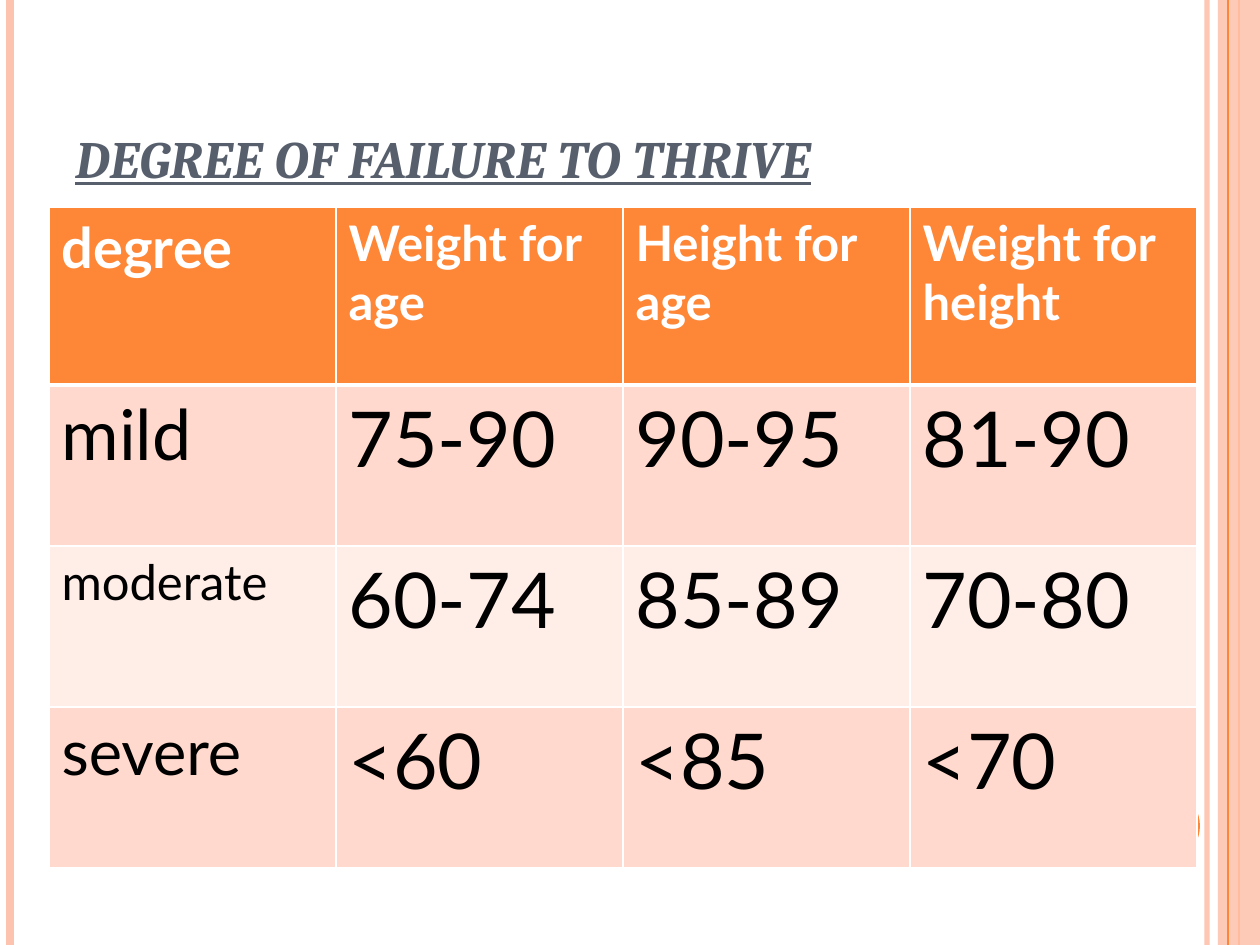
from pptx import Presentation
from pptx.util import Pt
from pptx.dml.color import RGBColor
from pptx.enum.shapes import MSO_CONNECTOR, MSO_SHAPE
from pptx.enum.text import MSO_ANCHOR
from pptx.oxml.ns import qn
from lxml.etree import SubElement

PX = 914400 / 126
THEME = {
    "accent": "FE8637", "peach": "FEC3AE", "title": "575F6D",
    "white": "FFFFFF", "black": "000000", "bands": ["FFD9CE", "FFEDE8"],
    "serif": "Cambria", "sans": "Lato",
    "title_size": 30, "head_size": 28, "value_size": 44,
    "label_sizes": [32, 40, 28, 36],
}


def px(*nums):
    return [round(n * PX) for n in nums]


def write(frame, text, font, size, color, bold):
    run = frame.paragraphs[0].add_run()
    run.text = text
    run.font.name = font
    run.font.size = Pt(size)
    run.font.bold = bold
    run.font.color.rgb = RGBColor.from_string(color)
    return run


deck = Presentation()
deck.slide_width, deck.slide_height = px(1260, 945)
slide = deck.slides.add_slide(deck.slide_layouts[6])
shapes = slide.shapes

stripes = [
    (1207, "peach", 3, 93),
    (10, "peach", 4.5, 100),
    (1239, "accent", 1.5, 100),
    (1218, "peach", 0, 87),
    (1228, "accent", 0.75, 100),
]
for left, tone, width, alpha in stripes:
    color = RGBColor.from_string(THEME[tone])
    if width:
        stripe = shapes.add_connector(MSO_CONNECTOR.STRAIGHT, *px(left, 0, left, 945))
        stripe.line.width = Pt(width)
        paint = stripe.line.fill
        SubElement(stripe._element.spPr, qn("a:effectLst"))
    else:
        stripe = shapes.add_shape(MSO_SHAPE.RECTANGLE, *px(left, 0, 1260 - left, 945))
        stripe.shadow.inherit = False
        stripe.line.fill.background()
        paint = stripe.fill
    paint.solid()
    paint.fore_color.rgb = color
    if alpha < 100:
        tint = next(stripe._element.spPr.iter(qn("a:srgbClr")))
        SubElement(tint, qn("a:alpha"), val=str(alpha * 1000))

disc = shapes.add_shape(MSO_SHAPE.OVAL, *px(1124, 788, 76, 76))
disc.shadow.inherit = False
disc.fill.solid()
disc.fill.fore_color.rgb = RGBColor.from_string(THEME["accent"])
disc.line.fill.background()

title = shapes.add_textbox(*px(63, 38, 1029, 157)).text_frame
title.word_wrap = True
title.vertical_anchor = MSO_ANCHOR.BOTTOM
run = write(title, "DEGREE OF FAILURE TO THRIVE", THEME["serif"],
            THEME["title_size"], THEME["title"], True)
run.font.italic = True
run.font.underline = True

rows = [
    ["degree", "Weight for age", "Height for age", "Weight for height"],
    ["mild", "75-90", "90-95", "81-90"],
    ["moderate", "60-74", "85-89", "70-80"],
    ["severe", "<60", "<85", "<70"],
]
table = shapes.add_table(4, 4, *px(49, 207, 1148, 661)).table
for col in table.columns:
    col.width = px(287)[0]
for r, words in enumerate(rows):
    head = r == 0
    table.rows[r].height = px(178 if head else 161)[0]
    fill = THEME["accent"] if head else THEME["bands"][(r - 1) % 2]
    for c, word in enumerate(words):
        cell = table.cell(r, c)
        props = cell._tc.get_or_add_tcPr()
        for side in "LRTB":
            thick = (r, side) in [(0, "B"), (1, "T")]
            edge = SubElement(props, qn("a:ln" + side), w=str(Pt(3 if thick else 1)))
            ink = SubElement(edge, qn("a:solidFill"))
            SubElement(ink, qn("a:srgbClr"), val=THEME["white"])
        cell.fill.solid()
        cell.fill.fore_color.rgb = RGBColor.from_string(fill)
        size = THEME["head_size"] if head else THEME["value_size"]
        if c == 0:
            size = THEME["label_sizes"][r]
        write(cell.text_frame, word, THEME["sans"], size,
              THEME["white"] if head else THEME["black"], head)

deck.save("out.pptx")
